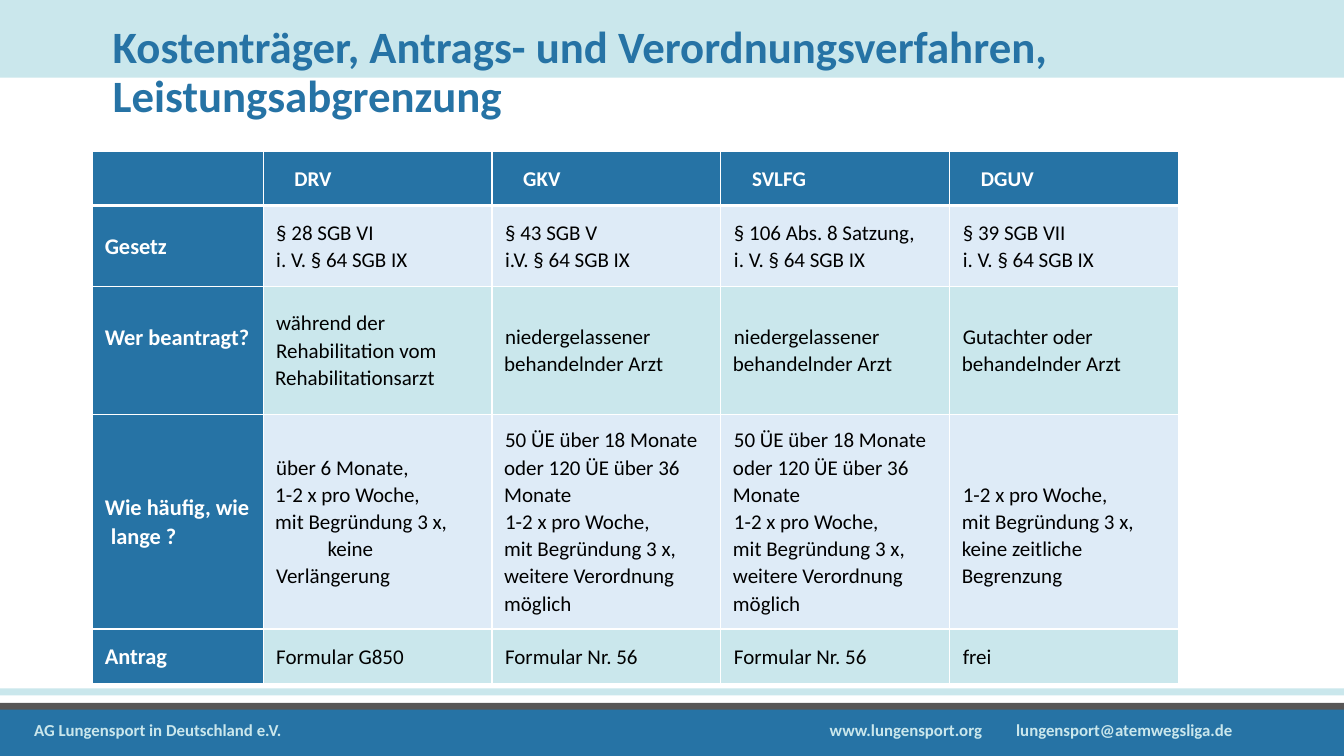
from dataclasses import dataclass

from lxml.etree import SubElement
from pptx import Presentation
from pptx.dml.color import RGBColor
from pptx.enum.shapes import MSO_SHAPE
from pptx.enum.text import MSO_ANCHOR
from pptx.oxml.ns import qn
from pptx.util import Inches, Pt

BLUE = RGBColor(0x26, 0x73, 0xA5)
AQUA = RGBColor(0xCA, 0xE7, 0xEC)
PALE = RGBColor(0xDE, 0xEB, 0xF7)
GRAY = RGBColor(0x57, 0x56, 0x56)
WHITE = RGBColor(0xFF, 0xFF, 0xFF)
BLACK = RGBColor(0x00, 0x00, 0x00)

FONT = "Calibri"
WIDTH, HEIGHT = Inches(13.33), Inches(7.5)
CELL_MARGIN = Inches(0.12)
FIRST_LINE = Inches(0.01)


def across(percent: float) -> int:
    return round(WIDTH * percent / 100)


def down(percent: float) -> int:
    return round(HEIGHT * percent / 100)


@dataclass(frozen=True)
class Band:
    top: float
    height: float
    color: RGBColor


@dataclass(frozen=True)
class Line:
    """A paragraph; the indent is in inches, \\v marks a line break."""
    text: str
    indent: float = 0


@dataclass(frozen=True)
class Entry:
    """The content of a cell; extra margins are shares of the slide height."""
    lines: tuple[Line, ...]
    extra_top: float = 0
    extra_bottom: float = 0


def entry(*texts: str) -> Entry:
    return Entry(tuple(Line(text) for text in texts))


@dataclass(frozen=True)
class Row:
    height: float
    label: Entry
    values: tuple[Entry, ...]


STRIPE = 0.93
BANDS = [
    Band(93.6, 6.4, BLUE),
    *(Band(92.93 - step * STRIPE, STRIPE, color)
      for step, color in enumerate((GRAY, WHITE, AQUA))),
    Band(0, 10.27, AQUA),
]

LABEL_WIDTH, VALUE_WIDTH = 12.68, 17.03
HEADER_HEIGHT = 7.2
PAYERS = ("DRV", "GKV", "SVLFG", "DGUV")
DOCTOR = entry("niedergelassener behandelnder Arzt")
LONG_TERM = entry(
    "50 ÜE über 18 Monate oder 120 ÜE über 36 Monate",
    "1-2 x pro Woche,\vmit Begründung 3 x, weitere Verordnung möglich",
)
ROWS = [
    Row(10.67, entry("Gesetz"), (
        entry("§ 28 SGB VI", "i. V. § 64 SGB IX"),
        entry("§ 43 SGB V", "i.V. § 64 SGB IX"),
        entry("§ 106 Abs. 8 Satzung,", "i. V. § 64 SGB IX"),
        entry("§ 39 SGB VII", "i. V. § 64 SGB IX"),
    )),
    Row(16.93, Entry((Line("Wer beantragt?"),), extra_bottom=3.5), (
        entry("während der", "Rehabilitation vom Rehabilitationsarzt"),
        DOCTOR,
        DOCTOR,
        entry("Gutachter oder\vbehandelnder Arzt"),
    )),
    Row(28.4, Entry((Line("Wie häufig, wie"), Line("lange ?", 0.05))), (
        Entry((
            Line("über 6 Monate,\v1-2 x pro Woche,\vmit Begründung 3 x,"),
            Line("keine", 0.51),
            Line("Verlängerung"),
        )),
        LONG_TERM,
        LONG_TERM,
        Entry((Line("1-2 x pro Woche,\vmit Begründung 3 x, "
                    "keine zeitliche Begrenzung"),), extra_top=3.6),
    )),
    Row(7.2, entry("Antrag"), (
        entry("Formular G850"),
        entry("Formular Nr. 56"),
        entry("Formular Nr. 56"),
        entry("frei"),
    )),
]


def write(para, text: str, *, size: float, color: RGBColor,
          bold: bool = False, spacing: float = 1.0) -> None:
    para.line_spacing = spacing
    for number, piece in enumerate(text.split("\v")):
        if number:
            para.add_line_break()
        span = para.add_run()
        span.text = piece
        span.font.name = FONT
        span.font.size = Pt(size)
        span.font.bold = bold
        span.font.color.rgb = color


def add_box(slide, left: float, top: float, width: float, height: float):
    box = slide.shapes.add_textbox(across(left), down(top), across(width), down(height))
    box.text_frame.word_wrap = True
    return box.text_frame


def add_band(slide, band: Band) -> None:
    shape = slide.shapes.add_shape(
        MSO_SHAPE.RECTANGLE, 0, down(band.top), WIDTH, down(band.height))
    shape.shadow.inherit = False
    shape.fill.solid()
    shape.fill.fore_color.rgb = band.color
    shape.line.fill.background()


def set_borders(cell, top: float, bottom: float) -> None:
    properties = cell._tc.get_or_add_tcPr()
    for side, points in (("L", 1), ("R", 1), ("T", top), ("B", bottom)):
        line = SubElement(properties, qn(f"a:ln{side}"), w=str(Pt(points)))
        fill = SubElement(line, qn("a:solidFill"))
        SubElement(fill, qn("a:srgbClr"), val=str(WHITE))


def fill_cell(cell, content: Entry, *, fill: RGBColor, color: RGBColor, size: float,
              bold: bool = False, top: float = 1, bottom: float = 1) -> None:
    set_borders(cell, top, bottom)
    cell.fill.solid()
    cell.fill.fore_color.rgb = fill
    cell.vertical_anchor = MSO_ANCHOR.MIDDLE
    cell.margin_left = cell.margin_right = CELL_MARGIN
    cell.margin_top = CELL_MARGIN + down(content.extra_top)
    cell.margin_bottom = CELL_MARGIN + down(content.extra_bottom)
    for number, line in enumerate(content.lines):
        frame = cell.text_frame
        para = frame.add_paragraph() if number else frame.paragraphs[0]
        properties = para._p.get_or_add_pPr()
        properties.set("marL", str(Inches(line.indent)))
        properties.set("indent", str(0 if bold and not line.indent else FIRST_LINE))
        write(para, line.text, size=size, color=color, bold=bold, spacing=1.06)


def add_payer_table(slide) -> None:
    heights = [HEADER_HEIGHT, *(row.height for row in ROWS)]
    widths = [LABEL_WIDTH] + [VALUE_WIDTH] * len(PAYERS)
    table = slide.shapes.add_table(
        len(heights), len(widths), across(6.9), down(20),
        across(sum(widths)), down(sum(heights))).table
    table.first_row = table.horz_banding = False
    for column, width in zip(table.columns, widths):
        column.width = across(width)
    for table_row, height in zip(table.rows, heights):
        table_row.height = down(height)

    # Header row
    headers = [Entry(())] + [Entry((Line(payer, 0.18),)) for payer in PAYERS]
    for column, header in enumerate(headers):
        fill_cell(table.cell(0, column), header, fill=BLUE, color=WHITE,
                  size=15, bold=True, bottom=3)

    # Body rows in alternating colours
    for number, row in enumerate(ROWS, start=1):
        top = 3 if number == 1 else 1
        fill_cell(table.cell(number, 0), row.label, fill=BLUE, color=WHITE,
                  size=16, bold=True, top=top)
        for column, value in enumerate(row.values, start=1):
            fill_cell(table.cell(number, column), value, color=BLACK, size=15,
                      fill=PALE if number % 2 else AQUA, top=top)


def add_footer(slide) -> None:
    para = add_box(slide, 1.8, 94.53, 96.17, 5.33).paragraphs[0]
    stops = SubElement(para._p.get_or_add_pPr(), qn("a:tabLst"))
    for position in (59.2, 73.07):
        SubElement(stops, qn("a:tab"), pos=str(across(position)), algn="l")
    write(para, "AG Lungensport in Deutschland e.V.\twww.lungensport.org"
                "\tlungensport@atemwegsliga.de", size=12, color=AQUA, bold=True)


def main() -> None:
    deck = Presentation()
    deck.slide_width, deck.slide_height = WIDTH, HEIGHT
    slide = deck.slides.add_slide(deck.slide_layouts[6])

    # Background bands and footer
    for band in BANDS:
        add_band(slide, band)
    add_footer(slide)

    # Title
    title = add_box(slide, 7.65, -0.53, 88.15, 20.53)
    title.vertical_anchor = MSO_ANCHOR.MIDDLE
    write(title.paragraphs[0],
          "Kostenträger, Antrags- und Verordnungsverfahren, Leistungsabgrenzung",
          size=32, color=BLUE, bold=True, spacing=0.9)

    add_payer_table(slide)
    deck.save("out.pptx")


if __name__ == "__main__":
    main()
